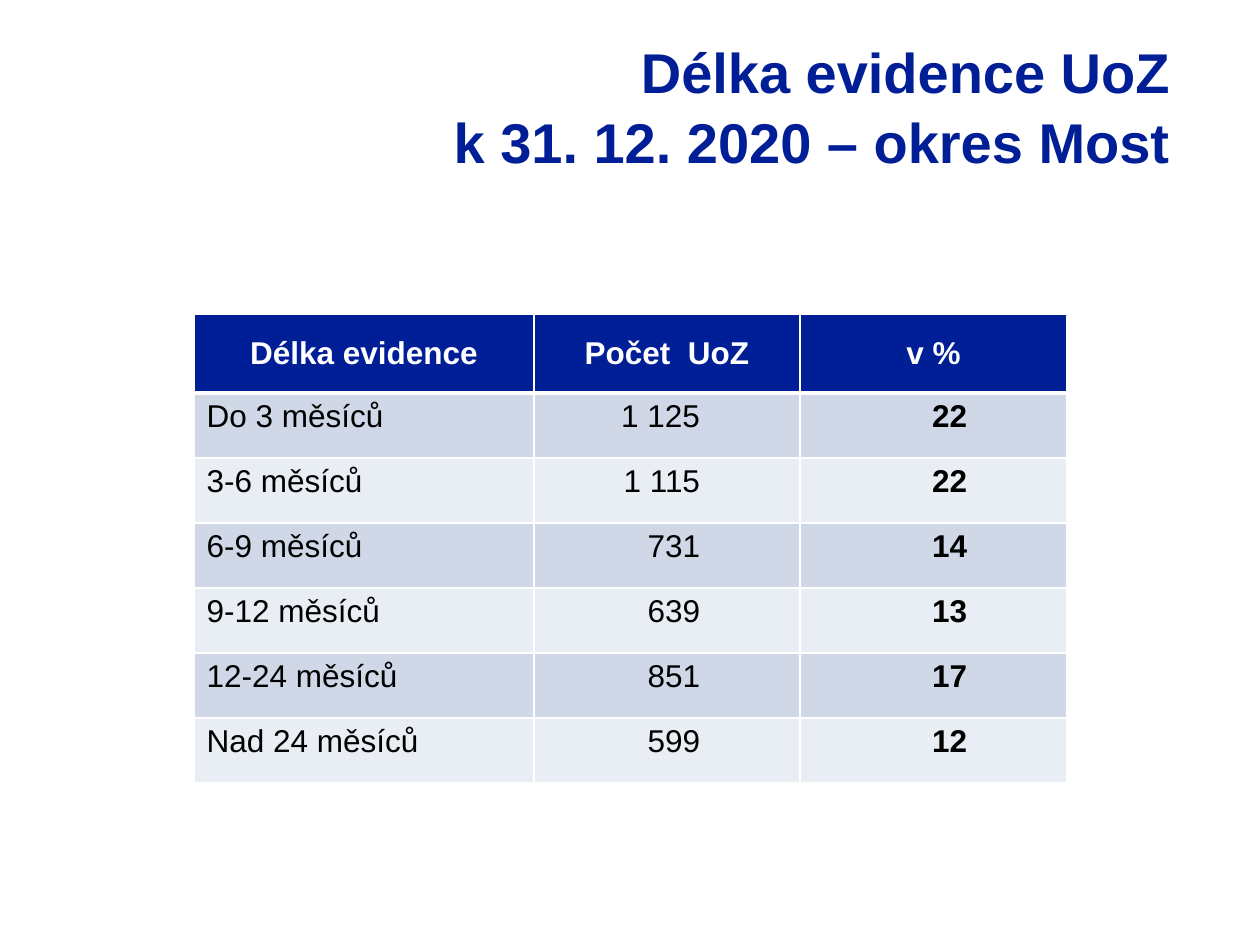
from lxml import etree
from pptx import Presentation
from pptx.dml.color import RGBColor
from pptx.enum.text import MSO_ANCHOR as Anchor, PP_ALIGN as Align
from pptx.oxml.ns import qn
from pptx.util import Pt

PX = 914400 // 126
NAVY = RGBColor(0x00, 0x1E, 0x96)
WHITE = RGBColor(0xFF, 0xFF, 0xFF)
BLACK = RGBColor(0x00, 0x00, 0x00)
BANDS = [RGBColor(0xD0, 0xD8, 0xE8), RGBColor(0xE9, 0xED, 0xF4)]

TITLE = [("Délka evidence UoZ", 31), ("k 31. 12. 2020 – okres Most", 0)]
HEADER = ["Délka evidence", "Počet  UoZ", "v %"]
DURATIONS = [
    ("Do 3 měsíců", "1 125", "22"),
    ("3-6 měsíců", "1 115", "22"),
    ("6-9 měsíců", "731", "14"),
    ("9-12 měsíců", "639", "13"),
    ("12-24 měsíců", "851", "17"),
    ("Nad 24 měsíců", "599", "12"),
]
COLUMN_WIDTHS = [340, 266, 267]
HEADER_HEIGHT, ROW_HEIGHT = 79, 65

HEADER_FORMAT = {"size": Pt(18), "bold": True, "color": WHITE}
BODY_FORMAT = {"size": Pt(18), "bold": False, "color": BLACK}
TITLE_FORMAT = {"size": Pt(32), "bold": True, "color": NAVY}


class SlideBuilder:
    def __init__(self, page, font="Arial"):
        self.page = page
        self.font = font

    def add_text(self, para, text, align, style):
        para.alignment = align
        span = para.add_run()
        span.text = text
        span.font.name = self.font
        for name, value in style.items():
            if name == "color":
                span.font.color.rgb = value
            else:
                setattr(span.font, name, value)

    def title(self, lines, left, top, width, height):
        """Add right-aligned lines, each given as text and right indent."""
        box = self.page.shapes.add_textbox(*(v * PX for v in (left, top, width, height)))
        frame = box.text_frame
        frame.word_wrap = True
        frame.margin_top = 9 * PX
        for index, (text, indent) in enumerate(lines):
            para = frame.add_paragraph() if index else frame.paragraphs[0]
            para.line_spacing = 1.04
            self.add_text(para, text, Align.RIGHT, TITLE_FORMAT)
            if indent:
                para._p.get_or_add_pPr().set("marR", str(indent * PX))

    def borders(self, cell, **widths):
        """Draw white borders; widths are points by side, 1 unless given."""
        props = cell._tc.get_or_add_tcPr()
        for side in "LRTB":
            line = etree.SubElement(props, qn(f"a:ln{side}"), w=str(Pt(widths.get(side, 1))))
            fill = etree.SubElement(line, qn("a:solidFill"))
            etree.SubElement(fill, qn("a:srgbClr"), val=str(WHITE))

    def cell(self, cell, text, row, col):
        if row == 0:
            fill, align, style = NAVY, Align.CENTER, HEADER_FORMAT
            cell.vertical_anchor = Anchor.MIDDLE
            self.borders(cell, B=3)
        else:
            fill = BANDS[(row - 1) % 2]
            align = Align.RIGHT if col else Align.LEFT
            style = {**BODY_FORMAT, "bold": col == 2}
            self.borders(cell, T=3 if row == 1 else 1)
            if col:
                cell.margin_right = 100 * PX
        cell.fill.solid()
        cell.fill.fore_color.rgb = fill
        self.add_text(cell.text_frame.paragraphs[0], text, align, style)

    def table(self, rows, left, top):
        heights = [HEADER_HEIGHT] + [ROW_HEIGHT] * (len(rows) - 1)
        size = sum(COLUMN_WIDTHS), sum(heights)
        table = self.page.shapes.add_table(
            len(rows), len(COLUMN_WIDTHS), *(v * PX for v in (left, top, *size))
        ).table
        for column, width in zip(table.columns, COLUMN_WIDTHS):
            column.width = width * PX
        for row, (texts, height) in enumerate(zip(rows, heights)):
            table.rows[row].height = height * PX
            for col, text in enumerate(texts):
                self.cell(table.cell(row, col), text, row, col)


def main():
    deck = Presentation()
    deck.slide_width, deck.slide_height = 1260 * PX, 945 * PX
    page = deck.slides.add_slide(deck.slide_layouts[6])
    builder = SlideBuilder(page)
    builder.title(TITLE, 302, 26, 912, 189)
    builder.table([HEADER, *DURATIONS], 194, 314)
    deck.save("out.pptx")


if __name__ == "__main__":
    main()
